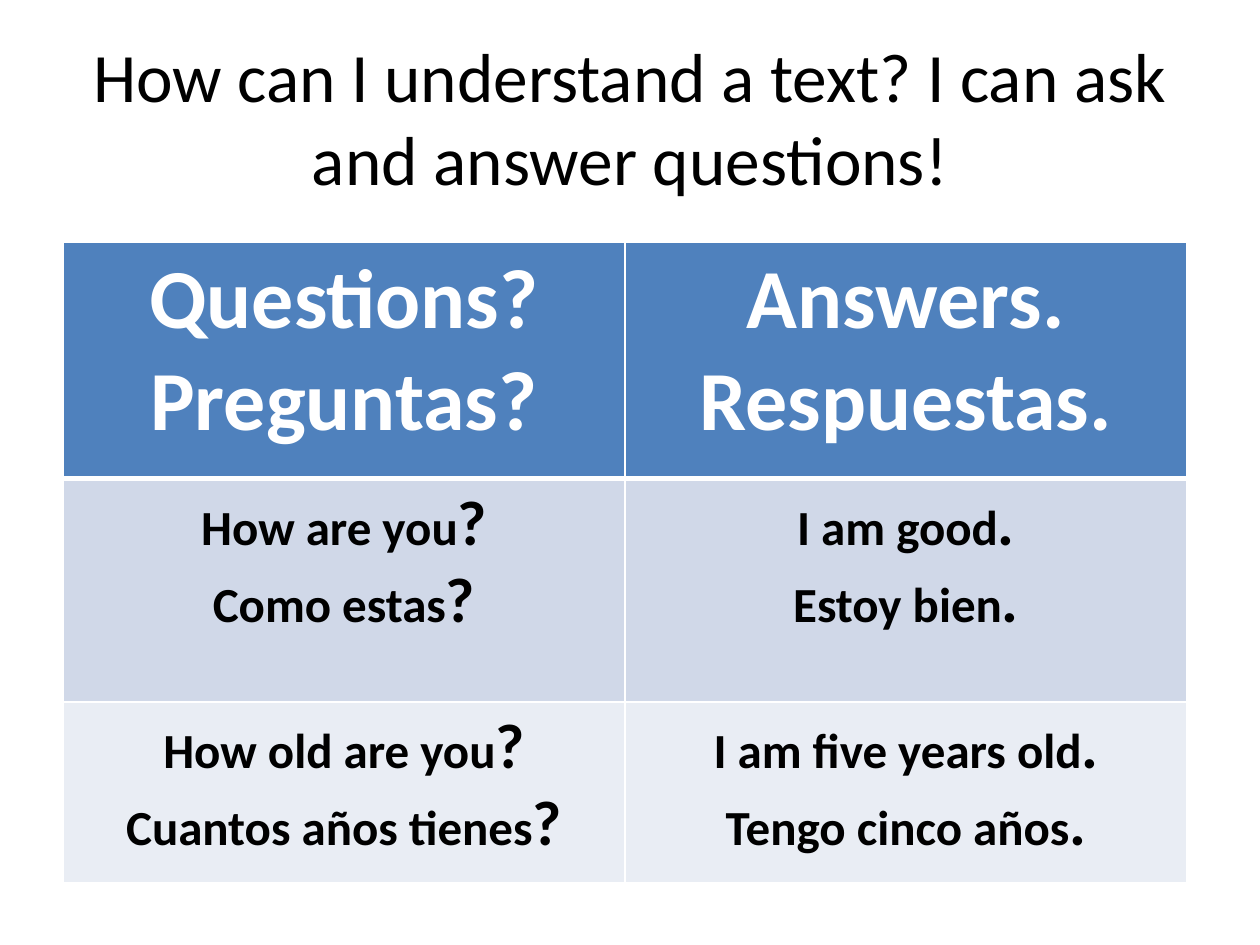
from dataclasses import dataclass

from lxml.etree import SubElement
from pptx import Presentation
from pptx.dml.color import RGBColor
from pptx.enum.text import MSO_ANCHOR, MSO_AUTO_SIZE, PP_ALIGN
from pptx.oxml.ns import qn
from pptx.util import Inches, Pt


@dataclass(frozen=True)
class Theme:
    font: str = "Calibri"
    ink: str = "000000"
    paper: str = "FFFFFF"
    header: str = "4F81BD"
    bands: tuple = ("D0D8E8", "E9EDF4")
    title_size: float = 39.6
    header_size: float = 48
    phrase_size: float = 28
    mark_size: float = 36
    rule: float = 1
    header_rule: float = 3


THEME = Theme()
TITLE = "How can I understand a text? I can ask and answer questions!"
HEADINGS = [("Questions?", "Preguntas?"), ("Answers.", "Respuestas.")]
PHRASES = [
    [("How are you?", "Como estas?"), ("I am good.", "Estoy bien.")],
    [("How old are you?", "Cuantos años tienes?"),
     ("I am five years old.", "Tengo cinco años.")],
]
LEFT = 0.5
TABLE_TOP = 1.92
COLUMN_WIDTH = 4.46
ROW_HEIGHTS = (1.88, 1.77, 1.44)


def add_run(paragraph, text, size, color, bold=True):
    run = paragraph.add_run()
    run.text = text
    formats = {"name": THEME.font, "size": Pt(size), "bold": bold}
    for attribute, value in formats.items():
        setattr(run.font, attribute, value)
    run.font.color.rgb = RGBColor.from_string(color)


def add_title(slide):
    title = slide.shapes.title
    box = {"left": LEFT, "top": 0.3, "width": 9, "height": 1.25}
    for attribute, inches in box.items():
        setattr(title, attribute, Inches(inches))
    frame = title.text_frame
    frame.auto_size = MSO_AUTO_SIZE.NONE
    frame.vertical_anchor = MSO_ANCHOR.MIDDLE
    frame.paragraphs[0].alignment = PP_ALIGN.CENTER
    add_run(frame.paragraphs[0], TITLE, THEME.title_size, THEME.ink, bold=False)


def set_borders(cell, **widths):
    """Draw the cell's sides; the border elements must precede its fill."""
    properties = cell._tc.get_or_add_tcPr()
    for side in "LRTB":
        width = Pt(widths.get(side, THEME.rule))
        line = SubElement(properties, qn(f"a:ln{side}"), w=str(width))
        fill = SubElement(line, qn("a:solidFill"))
        SubElement(fill, qn("a:srgbClr"), val=THEME.paper)


def fill_cell(cell, lines, color, size, mark_size, ink):
    """Write centred lines whose closing punctuation has its own size."""
    cell.fill.solid()
    cell.fill.fore_color.rgb = RGBColor.from_string(color)
    frame = cell.text_frame
    for index, line in enumerate(lines):
        paragraph = frame.add_paragraph() if index else frame.paragraphs[0]
        paragraph.alignment = PP_ALIGN.CENTER
        if size == mark_size:
            add_run(paragraph, line, size, ink)
        else:
            add_run(paragraph, line[:-1], size, ink)
            add_run(paragraph, line[-1], mark_size, ink)


def add_phrase_table(slide):
    rows, columns = len(ROW_HEIGHTS), len(HEADINGS)
    table = slide.shapes.add_table(
        rows, columns, Inches(LEFT), Inches(TABLE_TOP),
        Inches(columns * COLUMN_WIDTH), Inches(sum(ROW_HEIGHTS))).table
    for column in table.columns:
        column.width = Inches(COLUMN_WIDTH)
    for row, height in zip(table.rows, ROW_HEIGHTS):
        row.height = Inches(height)

    for cell, lines in zip(table.rows[0].cells, HEADINGS):
        set_borders(cell, B=THEME.header_rule)
        fill_cell(cell, lines, THEME.header, THEME.header_size,
                  THEME.header_size, THEME.paper)
    for index, (phrases, band) in enumerate(zip(PHRASES, THEME.bands), start=1):
        top_rule = THEME.header_rule if index == 1 else THEME.rule
        for cell, lines in zip(table.rows[index].cells, phrases):
            set_borders(cell, T=top_rule)
            fill_cell(cell, lines, band, THEME.phrase_size,
                      THEME.mark_size, THEME.ink)


def main():
    presentation = Presentation()
    presentation.slide_width = Inches(10)
    presentation.slide_height = Inches(7.5)
    title_only = presentation.slide_layouts[5]
    slide = presentation.slides.add_slide(title_only)
    add_title(slide)
    add_phrase_table(slide)
    presentation.save("out.pptx")


if __name__ == "__main__":
    main()
